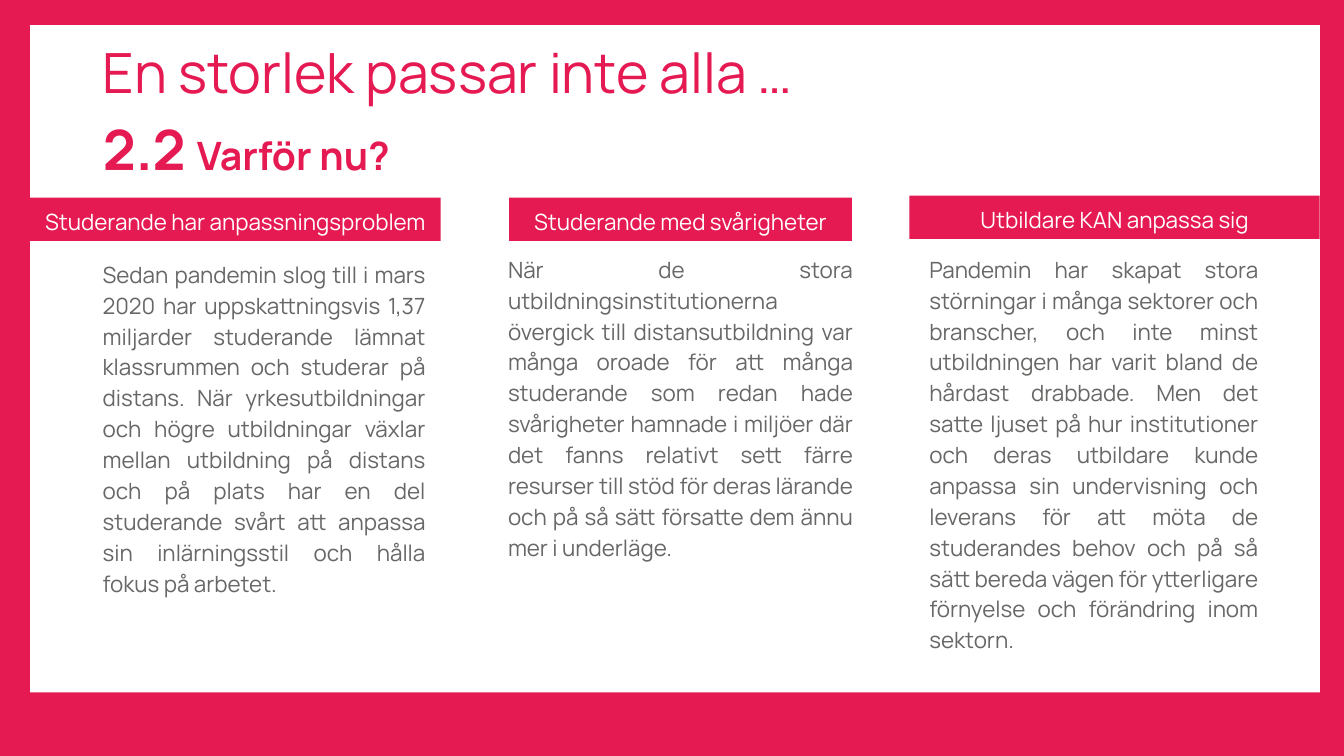
from dataclasses import dataclass

from pptx import Presentation
from pptx.dml.color import RGBColor
from pptx.enum.shapes import MSO_SHAPE
from pptx.enum.text import MSO_ANCHOR, MSO_AUTO_SIZE, PP_ALIGN
from pptx.util import Inches, Pt


@dataclass(frozen=True)
class Theme:
    font: str = "Manrope"
    accent: str = "E61A52"
    paper: str = "FFFFFF"
    ink: str = "676766"
    title_size: float = 39.6
    subtitle_size: float = 27.9
    body_size: float = 16
    line_spacing: float = 1.15
    space_after: float = 10


def add_span(para, text, *, font, size, color, bold=False):
    span = para.add_run()
    span.text = text
    span.font.name = font
    span.font.size = Pt(size)
    span.font.bold = bold
    span.font.color.rgb = RGBColor.from_string(color)


class SlideBuilder:
    def __init__(self, slide, theme):
        self.slide = slide
        self.theme = theme

    def span(self, para, text, size, color, bold=False):
        add_span(para, text, font=self.theme.font, size=size, color=color, bold=bold)

    def prepare(self, frame, align, anchor):
        frame.word_wrap = True
        frame.auto_size = MSO_AUTO_SIZE.NONE
        frame.vertical_anchor = anchor
        para = frame.paragraphs[0]
        para.alignment = align
        para.line_spacing = self.theme.line_spacing
        para.space_before = Pt(0)
        para.space_after = Pt(self.theme.space_after)
        return para

    def panel(self, left, top, width, height, color):
        box = self.slide.shapes.add_shape(
            MSO_SHAPE.RECTANGLE, Inches(left), Inches(top), Inches(width), Inches(height))
        box.shadow.inherit = False
        box.fill.solid()
        box.fill.fore_color.rgb = RGBColor.from_string(color)
        box.line.fill.background()
        return box

    def title(self, left, top, width, height, heading, number, subtitle):
        box = self.slide.shapes.title
        box.left, box.top = Inches(left), Inches(top)
        box.width, box.height = Inches(width), Inches(height)
        # Bring the title in front of the panels
        box.element.getparent().append(box.element)
        para = self.prepare(box.text_frame, PP_ALIGN.LEFT, MSO_ANCHOR.MIDDLE)
        box.text_frame.margin_bottom = Inches(0.58)
        theme = self.theme
        self.span(para, heading, theme.title_size, theme.accent)
        para.add_line_break()
        self.span(para, number, theme.title_size, theme.accent, bold=True)
        self.span(para, subtitle, theme.subtitle_size, theme.accent, bold=True)

    def body(self, left, top, width, height, text):
        box = self.slide.shapes.add_textbox(
            Inches(left), Inches(top), Inches(width), Inches(height))
        para = self.prepare(box.text_frame, PP_ALIGN.JUSTIFY, MSO_ANCHOR.TOP)
        self.span(para, text, self.theme.body_size, self.theme.ink)

    def band(self, left, top, width, height, text):
        box = self.panel(left, top, width, height, self.theme.accent)
        para = self.prepare(box.text_frame, PP_ALIGN.CENTER, MSO_ANCHOR.MIDDLE)
        self.span(para, text, self.theme.body_size, self.theme.paper)


# Each column: band (left, top, width), body (left, top, width), heading, text
COLUMNS = [
    ((0.3, 1.96, 4.07), (0.92, 2.5, 3.4), "Studerande har anpassningsproblem",
     "Sedan pandemin slog till i mars 2020 har uppskattningsvis 1,37 miljarder "
     "studerande lämnat klassrummen och studerar på distans. När yrkesutbildningar "
     "och högre utbildningar växlar mellan utbildning på distans och på plats har en "
     "del studerande svårt att anpassa sin inlärningsstil och hålla fokus på arbetet."),
    ((5.05, 1.96, 3.4), (4.94, 2.45, 3.62), "Studerande med svårigheter",
     "När de stora utbildningsinstitutionerna övergick till distansutbildning var "
     "många oroade för att många studerande som redan hade svårigheter hamnade i "
     "miljöer där det fanns relativt sett färre resurser till stöd för deras lärande "
     "och på så sätt försatte dem ännu mer i underläge."),
    ((9.02, 1.94, 4.07), (9.12, 2.45, 3.46), "Utbildare KAN anpassa sig",
     "Pandemin har skapat stora störningar i många sektorer och branscher, och inte "
     "minst utbildningen har varit bland de hårdast drabbade. Men det satte ljuset på "
     "hur institutioner och deras utbildare kunde anpassa sin undervisning och "
     "leverans för att möta de studerandes behov och på så sätt bereda vägen för "
     "ytterligare förnyelse och förändring inom sektorn."),
]
BAND_HEIGHT = 0.43
BODY_HEIGHT = 4.76


def main():
    deck = Presentation()
    deck.slide_width, deck.slide_height = Inches(13.33), Inches(7.5)
    theme = Theme()
    builder = SlideBuilder(deck.slides.add_slide(deck.slide_layouts[5]), theme)

    # Red frame around a white page
    builder.panel(0, 0, 13.33, 7.5, theme.accent)
    builder.panel(0.3, 0.25, 12.79, 6.62, theme.paper)

    # Title
    builder.title(0.92, 0.61, 11.5, 1.39,
                  "En storlek passar inte alla …", "2.2 ", "Varför nu?")

    # Three columns
    for band_place, body_place, heading, text in COLUMNS:
        builder.body(*body_place, BODY_HEIGHT, text)
        builder.band(*band_place, BAND_HEIGHT, heading)

    deck.save("out.pptx")


if __name__ == "__main__":
    main()
